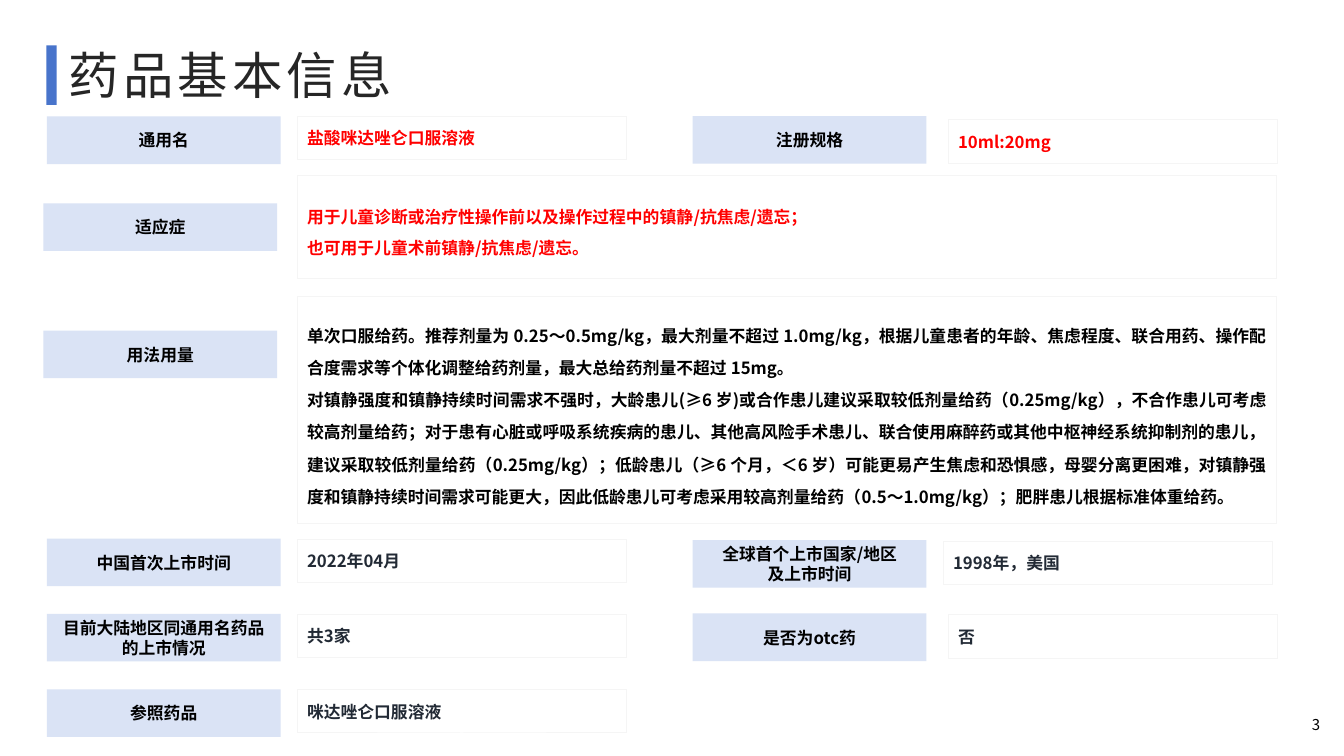
from pptx import Presentation
from pptx.dml.color import RGBColor
from pptx.enum.shapes import MSO_SHAPE as Shape
from pptx.enum.text import MSO_ANCHOR as Anchor, PP_ALIGN as Align
from pptx.oxml.xmlchemy import OxmlElement
from pptx.util import Pt

BLUE = RGBColor(0x48, 0x74, 0xCB)
PALE = RGBColor(0xDA, 0xE3, 0xF5)
FRAME = RGBColor(0xF5, 0xF5, 0xF5)
BLACK = RGBColor(0, 0, 0)
TITLE = RGBColor(0x26, 0x26, 0x26)
SLATE = RGBColor(0x22, 0x2A, 0x35)
RED = RGBColor(0xFF, 0, 0)

INDICATION = (
    "用于儿童诊断或治疗性操作前以及操作过程中的镇静/抗焦虑/遗忘；\n"
    "也可用于儿童术前镇静/抗焦虑/遗忘。"
)
DOSAGE = (
    "单次口服给药。推荐剂量为 0.25～0.5mg/kg，最大剂量不超过 1.0mg/kg，"
    "根据儿童患者的年龄、焦虑程度、联合用药、操作配合度需求等个体化调整给药剂量，"
    "最大总给药剂量不超过 15mg。\n"
    "对镇静强度和镇静持续时间需求不强时，大龄患儿(≥6 岁)或合作患儿建议采取较低剂量给药"
    "（0.25mg/kg），不合作患儿可考虑较高剂量给药；对于患有心脏或呼吸系统疾病的患儿、"
    "其他高风险手术患儿、联合使用麻醉药或其他中枢神经系统抑制剂的患儿，"
    "建议采取较低剂量给药（0.25mg/kg）；低龄患儿（≥6 个月，＜6 岁）可能更易产生焦虑和恐惧感，"
    "母婴分离更困难，对镇静强度和镇静持续时间需求可能更大，"
    "因此低龄患儿可考虑采用较高剂量给药（0.5～1.0mg/kg）；肥胖患儿根据标准体重给药。"
)


class SlideBuilder:
    font = "Noto Sans CJK SC"
    label_size = (167, 34)
    value_size = (235, 31)

    def __init__(self, s):
        self.s = s

    def set_text(self, sp, text, color, size=12, bold=True, align=Align.LEFT,
                 spacing=None, font=None, tracking=None):
        tf = sp.text_frame
        tf.word_wrap = True
        tf.vertical_anchor = Anchor.MIDDLE
        tf.text = text
        for p in tf.paragraphs:
            p.alignment = align
            if spacing:
                p.line_spacing = spacing
            for r in p.runs:
                r.font.size = Pt(size)
                r.font.bold = bold
                r.font.color.rgb = color
                r.font.name = font or self.font
                ea = OxmlElement("a:ea")
                ea.set("typeface", font or self.font)
                rPr = r._r.get_or_add_rPr()
                rPr.find("{*}latin").addnext(ea)
                if tracking:
                    rPr.set("spc", str(tracking * 100))

    def text(self, x, y, w, h, text, color, **style):
        sp = self.s.shapes.add_textbox(Pt(x), Pt(y), Pt(w), Pt(h))
        self.set_text(sp, text, color, **style)

    def box(self, x, y, w, h, fill=None, line=None):
        sp = self.s.shapes.add_shape(Shape.RECTANGLE, Pt(x), Pt(y), Pt(w), Pt(h))
        sp.shadow.inherit = False
        if fill is None:
            sp.fill.background()
        else:
            sp.fill.solid()
            sp.fill.fore_color.rgb = fill
        if line is None:
            sp.line.fill.background()
        else:
            sp.line.color.rgb = line
            sp.line.width = Pt(0.75)
        return sp

    def label(self, x, y, text):
        sp = self.box(x, y, *self.label_size, fill=PALE)
        self.set_text(sp, text, BLACK, align=Align.CENTER)

    def value(self, x, y, text, color=SLATE, size=None, **style):
        sp = self.box(x, y, *(size or self.value_size), line=FRAME)
        self.set_text(sp, text, color, **style)


def main():
    prs = Presentation()
    prs.slide_width, prs.slide_height = Pt(960), Pt(540)
    slide = SlideBuilder(prs.slides.add_slide(prs.slide_layouts[6]))

    slide.box(33.1, 32.4, 7.4, 42.5, fill=BLUE)
    slide.text(42, 29.5, 778, 47, "药品基本信息", TITLE, size=36, bold=False, tracking=3)
    slide.text(902, 503.5, 48, 28.5, "3", BLACK, size=10.7, bold=False,
               align=Align.RIGHT, font="Noto Sans CJK JP")

    for x, y, text in [
        (33.5, 83.2, "通用名"),
        (494.8, 83, "注册规格"),
        (31, 145.2, "适应症"),
        (31, 236.2, "用法用量"),
        (33.5, 384.7, "中国首次上市时间"),
        (494.8, 385.8, "全球首个上市国家/地区\n及上市时间"),
        (33.5, 438.5, "目前大陆地区同通用名药品的上市情况"),
        (494.8, 438.2, "是否为otc药"),
        (33.5, 492.4, "参照药品"),
    ]:
        slide.label(x, y, text)

    for x, y, text, color in [
        (212.3, 83, "盐酸咪达唑仑口服溶液", RED),
        (677.3, 85.7, "10ml:20mg", RED),
        (212.3, 385.2, "2022年04月", SLATE),
        (673.7, 386.7, "1998年，美国", SLATE),
        (212.3, 438.7, "共3家", SLATE),
        (677.3, 439.2, "否", SLATE),
        (212.3, 492.6, "咪达唑仑口服溶液", SLATE),
    ]:
        slide.value(x, y, text, color)

    slide.value(212.3, 125.5, INDICATION, RED, size=(699.5, 73.5), spacing=1.5)
    slide.value(212.3, 211.7, DOSAGE, BLACK, size=(699.5, 162.5), spacing=1.6,
                align=Align.JUSTIFY)

    prs.save("out.pptx")


if __name__ == "__main__":
    main()
